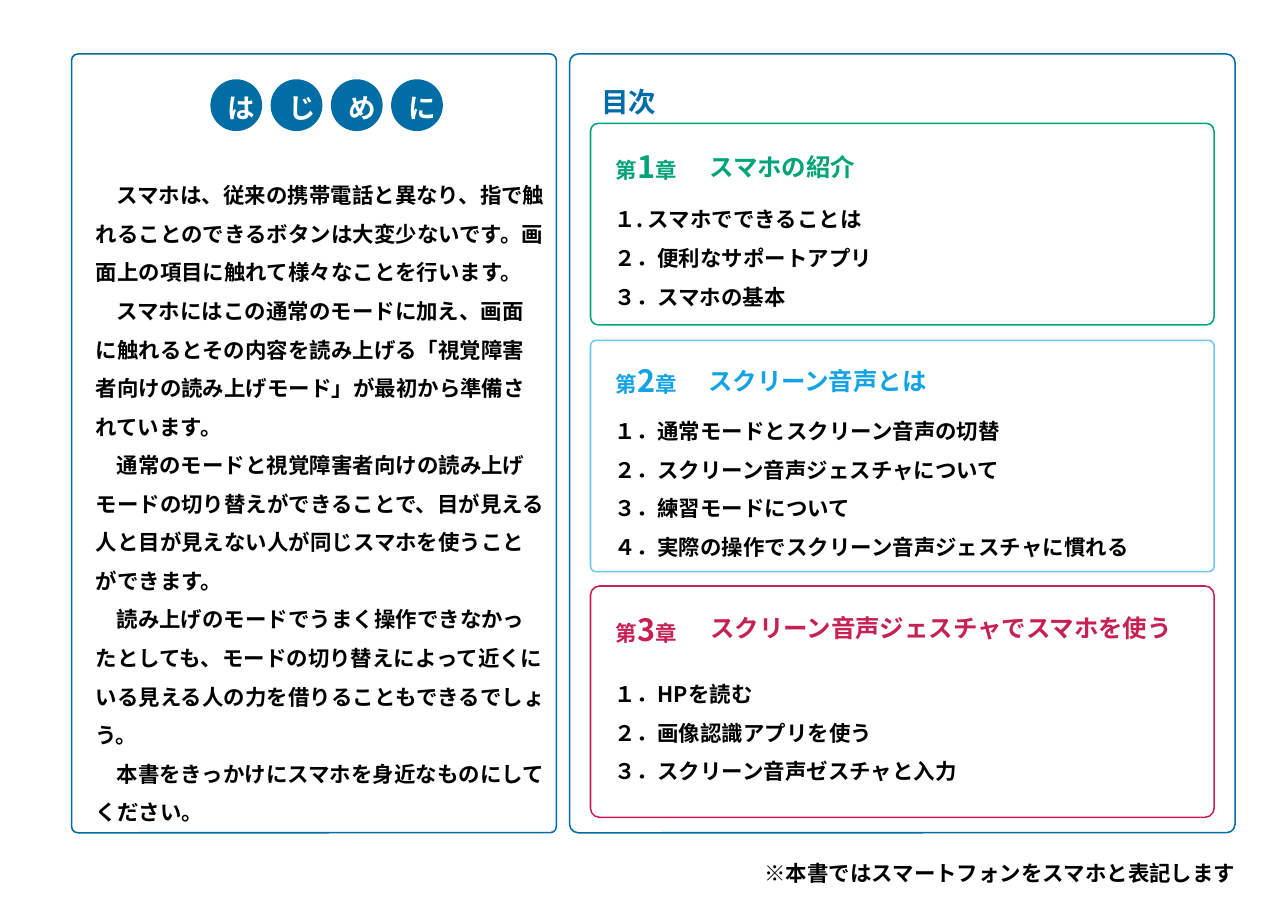
from pptx import Presentation
from pptx.dml.color import RGBColor
from pptx.enum import shapes, text
from pptx.oxml import ns
from pptx.util import Inches, Pt

FONT = "Noto Sans CJK JP"
COLORS = {
    "white": "FFFFFF", "black": "000000", "blue": "006DA4", "contents": "006DAB",
    "green": "00A478", "sky": "12A3E4", "sky_line": "6AC8F3", "red": "C62153",
}
BODY = {"size": Pt(14), "bold": True, "name": FONT}
CHAPTER_TITLE = BODY | {"size": Pt(16)}
CHAPTER_NUMBER = BODY | {"size": Pt(20)}
HEADING = BODY | {"size": Pt(18)}
LIST = {"line_spacing": 1.5}
CENTERED = {"alignment": text.PP_ALIGN.CENTER}

INTRODUCTION = [
    "スマホは、従来の携帯電話と異なり、指で触れることのできるボタンは大変少ないです。画面上の項目に触れて様々なことを行います。",
    "スマホにはこの通常のモードに加え、画面に触れるとその内容を読み上げる「視覚障害者向けの読み上げモード」が最初から準備されています。",
    "通常のモードと視覚障害者向けの読み上げモードの切り替えができることで、目が見える人と目が見えない人が同じスマホを使うことができます。",
    "読み上げのモードでうまく操作できなかったとしても、モードの切り替えによって近くにいる見える人の力を借りることもできるでしょう。",
    "本書をきっかけにスマホを身近なものにしてください。",
]
CHAPTERS = [
    {"number": "1", "title": "スマホの紹介", "color": "green", "line": "green",
     "frame": (5.36, 1.12, 5.66, 1.83), "radius": 0.039,
     "number_top": 1.29, "title_at": (6.34, 1.33), "list_top": 1.71,
     "items": ["１. スマホでできることは", "２．便利なサポートアプリ", "３．スマホの基本"]},
    {"number": "2", "title": "スクリーン音声とは", "color": "sky", "line": "sky_line",
     "frame": (5.36, 3.09, 5.66, 2.1), "radius": 0.024,
     "number_top": 3.24, "title_at": (6.33, 3.27), "list_top": 3.63,
     "items": ["１．通常モードとスクリーン音声の切替", "２．スクリーン音声ジェスチャについて",
               "３．練習モードについて", "４．実際の操作でスクリーン音声ジェスチャに慣れる"]},
    {"number": "3", "title": "スクリーン音声ジェスチャでスマホを使う", "color": "red", "line": "red",
     "frame": (5.36, 5.32, 5.66, 2.1), "radius": 0.039,
     "number_top": 5.5, "title_at": (6.35, 5.52), "list_top": 6.02,
     "items": ["１．HPを読む", "２．画像認識アプリを使う", "３．スクリーン音声ゼスチャと入力"]},
]


def rgb(color):
    return RGBColor.from_string(COLORS[color])


def apply_format(target, values):
    for name, value in values.items():
        setattr(target, name, value)


def add_filled_shape(slide, kind, position, fill):
    shape = slide.shapes.add_shape(kind, *map(Inches, position))
    shape.shadow.inherit = False
    shape.fill.solid()
    shape.fill.fore_color.rgb = rgb(fill)
    shape.line.fill.background()
    return shape


def add_frame(slide, position, radius, line):
    shape = add_filled_shape(slide, shapes.MSO_SHAPE.ROUNDED_RECTANGLE, position, "white")
    shape.adjustments[0] = radius
    shape.line.color.rgb = rgb(line)
    shape.line.width = Pt(1)


def add_run(paragraph, words, font_format, color):
    run = paragraph.add_run()
    run.text = words
    apply_format(run.font, font_format)
    run.font.color.rgb = rgb(color)
    east_asian = run.font._element.makeelement(ns.qn("a:ea"), {"typeface": FONT})
    run.font._element.find(ns.qn("a:latin")).addnext(east_asian)


def add_text(slide, position, paragraphs, color, layout={}, indent=0):
    frame = slide.shapes.add_textbox(*map(Inches, position)).text_frame
    apply_format(frame, {"word_wrap": True, "auto_size": text.MSO_AUTO_SIZE.SHAPE_TO_FIT_TEXT})
    for index, runs in enumerate(paragraphs):
        paragraph = frame.add_paragraph() if index else frame.paragraphs[0]
        apply_format(paragraph, layout)
        if indent:
            paragraph._p.get_or_add_pPr().set("indent", str(Inches(indent)))
        for words, font_format in runs:
            add_run(paragraph, words, font_format, color)


def add_list(slide, position, lines, indent=0):
    add_text(slide, position, [[(line, BODY)] for line in lines], "black", LIST, indent)


def add_circled_heading(slide, letters):
    for index, letter in enumerate(letters):
        left = 1.91 + index * 1.64 / 3
        add_filled_shape(slide, shapes.MSO_SHAPE.OVAL, (left, 0.72, 0.47, 0.47), "blue")
        add_text(slide, (left + 0.06, 0.78, 0.35, 0.4), [[(letter, HEADING)]], "white", CENTERED)


def add_chapter(slide, chapter):
    color = chapter["color"]
    add_frame(slide, chapter["frame"], chapter["radius"], chapter["line"])
    number = [("第", BODY), (chapter["number"], CHAPTER_NUMBER), ("章", BODY)]
    add_text(slide, (5.49, chapter["number_top"], 1.45, 0.46), [number], color)
    title = [(chapter["title"], CHAPTER_TITLE)]
    add_text(slide, (*chapter["title_at"], 4.67, 0.37), [title], color)
    items = chapter["items"]
    add_list(slide, (5.48, chapter["list_top"], 5.11, 0.39 * len(items)), items)


def main():
    presentation = Presentation()
    presentation.slide_width = Inches(11.69)
    presentation.slide_height = Inches(8.27)
    slide = presentation.slides.add_slide(presentation.slide_layouts[6])

    add_frame(slide, (0.65, 0.49, 4.4, 7.07), 0.013, "blue")
    add_circled_heading(slide, "はじめに")
    add_list(slide, (0.77, 1.49, 4.28, 6.11), INTRODUCTION, indent=0.19)

    add_frame(slide, (5.17, 0.49, 6.04, 7.07), 0.013, "blue")
    add_text(slide, (5.36, 0.72, 2.77, 0.4), [[("目次", HEADING)]], "contents")
    for chapter in CHAPTERS:
        add_chapter(slide, chapter)
    add_list(slide, (6.84, 7.64, 4.75, 0.45), ["※本書ではスマートフォンをスマホと表記します"])

    presentation.save("out.pptx")


if __name__ == "__main__":
    main()
